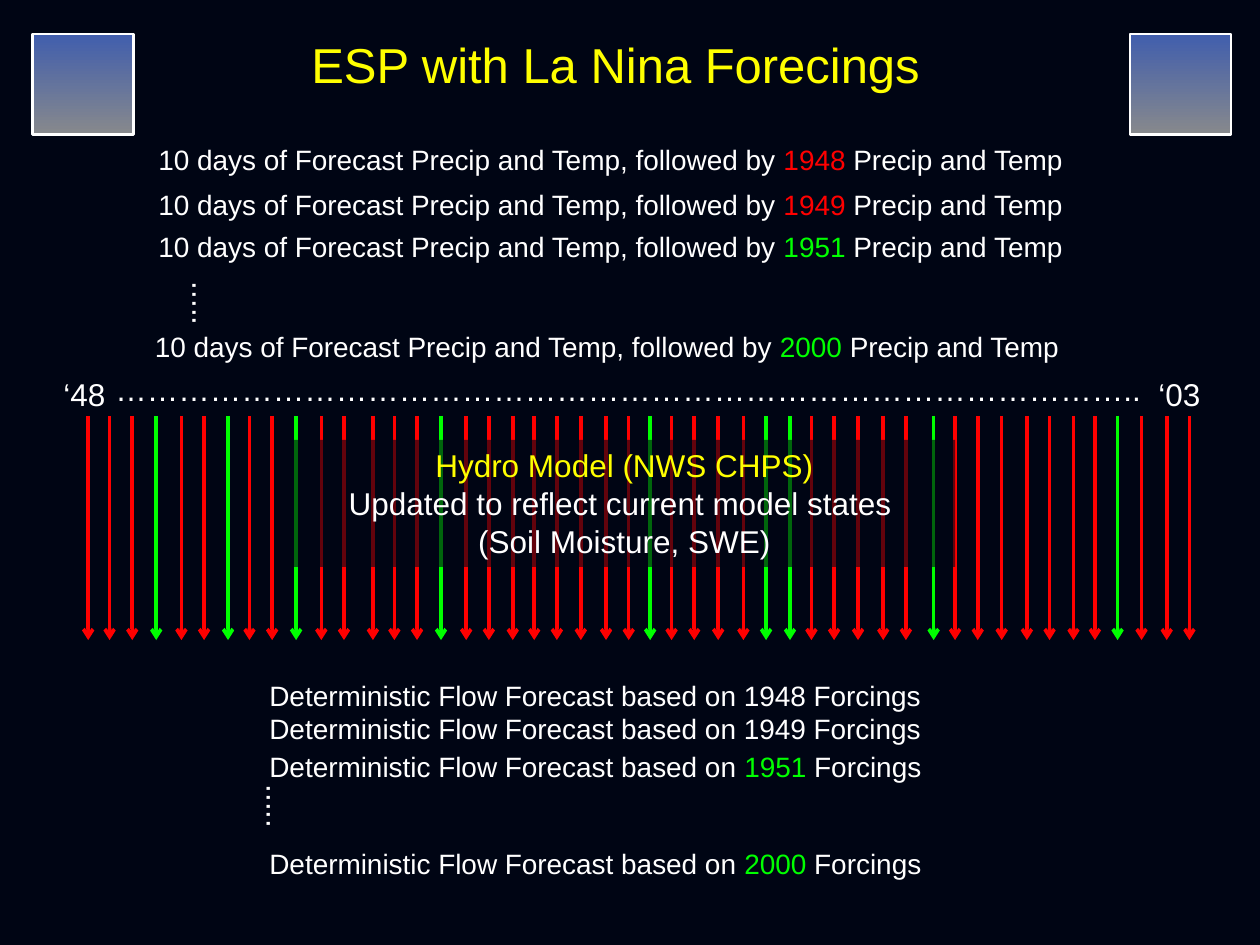
from lxml import etree
from pptx import Presentation
from pptx.dml.color import RGBColor
from pptx.enum import shapes, text
from pptx.oxml import ns
from pptx.util import Inches, Pt

COLORS = {
    "night": "000514", "white": "FFFFFF", "yellow": "FFFF00",
    "red": "FF0000", "green": "00FF00", "sky": "415EAD", "haze": "87898C",
}
FONT = "Arial"
CENTER = text.PP_ALIGN.CENTER
LEFT = text.PP_ALIGN.LEFT

ARROW_GROUPS = [0.7, 1.81, 2.96, 4.07, 5.16, 6.27, 7.41, 8.52]
ARROW_OFFSETS = [0, 0.17, 0.35, 0.54, 0.74, 0.92]
LA_NINA_ARROWS = {3, 6, 9, 15, 24, 29, 30, 36, 44}

FORCINGS = [  # left, top, year, color, tail, alignment
    (1.12, 1.08, "1948 ", "red", "Precip and Temp ", CENTER),
    (1.12, 1.44, "1949 ", "red", "Precip and Temp ", CENTER),
    (1.12, 1.77, "1951 ", "green", "Precip and Temp ", CENTER),
    (1.13, 2.57, "2000 ", "green", "Precip and Temp", LEFT),
]
FLOWS = [  # top, year, color
    (5.34, "1948 ", "white"),
    (5.6, "1949 ", "white"),
    (5.9, "1951 ", "green"),
    (6.67, "2000 ", "green"),
]


def rgb(name):
    return RGBColor.from_string(COLORS[name])


def write_paragraph(paragraph, runs, size, align=CENTER):
    """Fill a paragraph with (words, color) runs."""
    paragraph.alignment = align
    paragraph.font.size = Pt(size)
    paragraph.font.name = FONT
    if len(runs) == 1:
        paragraph.font.color.rgb = rgb(runs[0][1])
    for words, color in runs:
        run = paragraph.add_run()
        run.text = words
        if len(runs) > 1:
            run.font.color.rgb = rgb(color)


def add_label(slide, box, runs, size=18, align=CENTER, wrap=False, rotation=0):
    label = slide.shapes.add_textbox(*map(Inches, box))
    label.rotation = rotation
    label.text_frame.word_wrap = wrap
    write_paragraph(label.text_frame.paragraphs[0], runs, size, align)


def add_title(slide, box):
    title = slide.shapes.title
    title.left, title.top, title.width, title.height = map(Inches, box)
    frame = title.text_frame
    frame.vertical_anchor = text.MSO_ANCHOR.MIDDLE
    frame.auto_size = text.MSO_AUTO_SIZE.NONE
    write_paragraph(frame.paragraphs[0], [("ESP with La Nina Forecings", "yellow")], 28)


def add_corner_square(slide, box):
    square = slide.shapes.add_shape(shapes.MSO_SHAPE.RECTANGLE, *map(Inches, box))
    square.shadow.inherit = False
    square.fill.gradient()
    square.fill.gradient_angle = 270
    for stop, color, position in zip(square.fill.gradient_stops, ("sky", "haze"), (0, 1)):
        stop.color.rgb = rgb(color)
        stop.position = position
    square.line.color.rgb = rgb("white")
    square.line.width = Pt(1.5)


def add_forcings(slide, width, height):
    for left, top, year, color, tail, align in FORCINGS:
        runs = [("10 days of Forecast Precip and Temp, followed by ", "white"),
                (year, color), (tail, "white")]
        add_label(slide, (left, top, width, height), runs, 16, align, wrap=True)
    add_vertical_dots(slide, 1.35, 2.21)


def add_flows(slide, left, width, height):
    for top, year, color in FLOWS:
        runs = [("Deterministic Flow Forecast based on ", "white"),
                (year, color), ("Forcings", "white")]
        add_label(slide, (left, top, width, height), runs, 16, wrap=True)
    add_vertical_dots(slide, 1.94, 6.2)


def add_vertical_dots(slide, left, top):
    add_label(slide, (left, top, 0.55, 0.4), [(".....", "white")], rotation=90)


def add_year_axis(slide, top):
    add_label(slide, (0.4, top, 0.54, 0.4), [("‘48", "white")])
    add_label(slide, (9.09, top, 0.54, 0.4), [("‘03", "white")])
    add_label(slide, (0.81, top - 0.04, 8.35, 0.4), [("…" * 32 + "..", "white")])


def add_arrow(slide, x, top, bottom, color):
    arrow = slide.shapes.add_connector(
        shapes.MSO_CONNECTOR.STRAIGHT, Inches(x), Inches(top), Inches(x), Inches(bottom))
    arrow.line.color.rgb = rgb(color)
    arrow.line.width = Pt(2)
    properties = arrow.line._get_or_add_ln()
    etree.SubElement(properties, ns.qn("a:tailEnd"), type="arrow")
    etree.SubElement(arrow._element.spPr, ns.qn("a:effectLst"))


def add_model_runs(slide, top, bottom):
    """One arrow per year, green for La Nina years."""
    positions = [start + offset for start in ARROW_GROUPS for offset in ARROW_OFFSETS]
    for index, x in enumerate(positions):
        add_arrow(slide, x, top, bottom, "green" if index in LA_NINA_ARROWS else "red")


def add_hydro_model(slide, box):
    panel = slide.shapes.add_shape(shapes.MSO_SHAPE.RECTANGLE, *map(Inches, box))
    panel.shadow.inherit = False
    panel.line.fill.background()
    panel.fill.solid()
    panel.fill.fore_color.rgb = rgb("night")
    fill_color = panel._element.spPr.find(".//" + ns.qn("a:srgbClr"))
    etree.SubElement(fill_color, ns.qn("a:alpha"), val="61000")
    frame = panel.text_frame
    frame.word_wrap = True
    frame.vertical_anchor = text.MSO_ANCHOR.TOP
    lines = [("Hydro Model (NWS CHPS)", "yellow"),
             ("Updated to reflect current model states ", "white"),
             ("(Soil Moisture, SWE)", "white")]
    for index, line in enumerate(lines):
        paragraph = frame.add_paragraph() if index else frame.paragraphs[0]
        write_paragraph(paragraph, [line], 18)


def main():
    deck = Presentation()
    deck.slide_width, deck.slide_height = Inches(10), Inches(7.5)
    slide = deck.slides.add_slide(deck.slide_layouts[5])
    slide.background.fill.solid()
    slide.background.fill.fore_color.rgb = rgb("night")

    for left in (0.26, 8.97):
        add_corner_square(slide, (left, 0.27, 0.8, 0.8))
    add_title(slide, (2.3, 0.22, 5.17, 0.57))
    add_model_runs(slide, 3.3, 5.08)
    add_hydro_model(slide, (2.33, 3.49, 5.25, 1.01))
    add_forcings(slide, 7.51, 0.37)
    add_year_axis(slide, 2.93)
    add_flows(slide, 0.97, 7.51, 0.37)
    deck.save("out.pptx")


if __name__ == "__main__":
    main()
